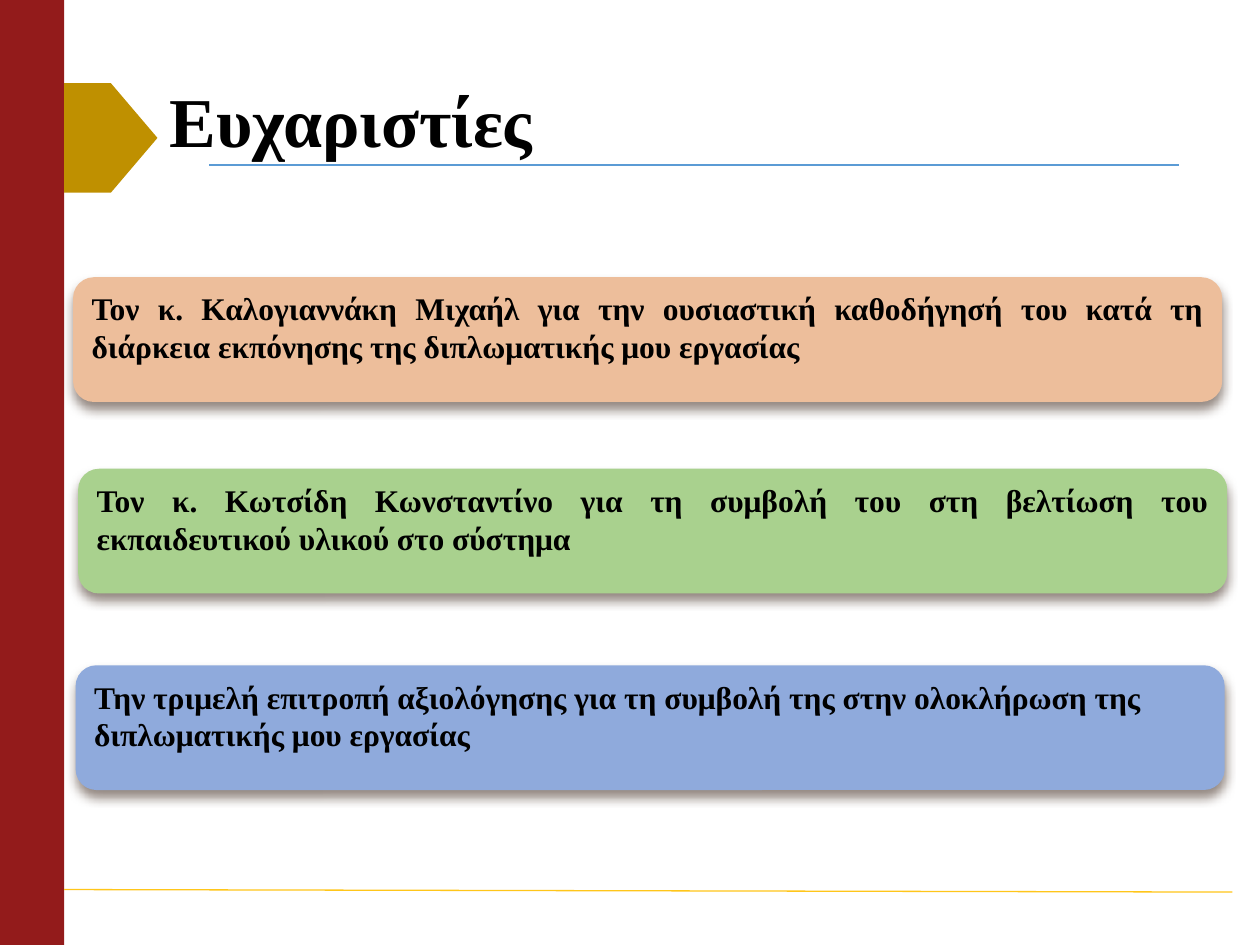
from lxml import etree
from pptx import Presentation
from pptx.dml.color import RGBColor
from pptx.enum.shapes import MSO_CONNECTOR as Conn, MSO_SHAPE as Geom
from pptx.enum.text import MSO_ANCHOR as Anchor, PP_ALIGN as Align
from pptx.oxml import parse_xml
from pptx.oxml.ns import nsdecls, qn
from pptx.util import Inches, Pt

BLACK = RGBColor(0x00, 0x00, 0x00)
RED = RGBColor(0x93, 0x1B, 0x1B)
GOLD = RGBColor(0xBF, 0x90, 0x00)
YELLOW = RGBColor(0xFF, 0xC6, 0x1A)
SKY = RGBColor(0x5B, 0x9B, 0xD5)
PEACH = RGBColor(0xED, 0xBE, 0x9B)
GREEN = RGBColor(0xA9, 0xD1, 0x8E)
BLUE = RGBColor(0x8F, 0xAA, 0xDC)
BROWN = RGBColor(0x4E, 0x3B, 0x30)

CARDS = [
    (0.58, 2.2, PEACH, Align.JUSTIFY,
     "Τον κ. Καλογιαννάκη Μιχαήλ για την ουσιαστική καθοδήγησή του "
     "κατά τη διάρκεια εκπόνησης της διπλωματικής μου εργασίας"),
    (0.62, 3.72, GREEN, Align.JUSTIFY,
     "Τον κ. Κωτσίδη Κωνσταντίνο για τη συμβολή του στη βελτίωση του "
     "εκπαιδευτικού υλικού στο σύστημα"),
    (0.6, 5.28, BLUE, Align.LEFT,
     "Την τριμελή επιτροπή αξιολόγησης για τη συμβολή της στην "
     "ολοκλήρωση της διπλωματικής μου εργασίας"),
]


def write(shape, text, size=18, align=Align.LEFT, anchor=Anchor.TOP,
          space=None, font="Times New Roman", color=BLACK):
    frame = shape.text_frame
    frame.word_wrap = True
    frame.vertical_anchor = anchor
    para = frame.paragraphs[0]
    para.alignment = align
    para.line_spacing = space
    run = para.add_run()
    run.text = text
    run.font.name = font
    run.font.size = Pt(size)
    run.font.bold = True
    run.font.color.rgb = color


class Deck:
    def __init__(self, width, height):
        self.prs = Presentation()
        self.prs.slide_width = Inches(width)
        self.prs.slide_height = Inches(height)
        self.slide = self.prs.slides.add_slide(self.prs.slide_layouts[6])

    def shape(self, geom, x, y, w, h, fill):
        shape = self.slide.shapes.add_shape(
            geom, Inches(x), Inches(y), Inches(w), Inches(h))
        shape.shadow.inherit = False
        shape.fill.solid()
        shape.fill.fore_color.rgb = fill
        shape.line.fill.background()
        return shape

    def card(self, x, y, fill, align, text):
        """Add a rounded box with text and a soft shadow below it."""
        card = self.shape(Geom.ROUNDED_RECTANGLE, x, y, 9.12, 0.99, fill)
        effects = card._element.spPr.find(qn("a:effectLst"))
        effects.append(parse_xml(
            f'<a:outerShdw {nsdecls("a")} blurRad="{Pt(6)}" dist="{Pt(4)}" '
            f'dir="5400000" algn="t" rotWithShape="0">'
            f'<a:srgbClr val="{BROWN}"><a:alpha val="60000"/></a:srgbClr>'
            f'</a:outerShdw>'))
        write(card, text, align=align)

    def line(self, x1, y1, x2, y2, color):
        line = self.slide.shapes.add_connector(
            Conn.STRAIGHT, Inches(x1), Inches(y1), Inches(x2), Inches(y2))
        line.line.color.rgb = color
        line.line.width = Pt(0.75)
        etree.SubElement(line._element.spPr, qn("a:effectLst"))

    def title(self, x, y, w, h, text):
        box = self.slide.shapes.add_textbox(
            Inches(x), Inches(y), Inches(w), Inches(h))
        write(box, text, size=40, anchor=Anchor.MIDDLE, space=0.9)


def main():
    deck = Deck(10, 7.5)
    deck.shape(Geom.RECTANGLE, 0, 0, 0.51, 7.5, RED)
    deck.line(1.66, 1.31, 9.36, 1.31, SKY)
    deck.line(0.51, 7.06, 9.78, 7.08, YELLOW)
    deck.shape(Geom.PENTAGON, 0.51, 0.66, 0.74, 0.87, GOLD)
    deck.title(1.25, 0.4, 8.06, 1.18, "Ευχαριστίες")
    for card in CARDS:
        deck.card(*card)
    deck.prs.save("out.pptx")


if __name__ == "__main__":
    main()
